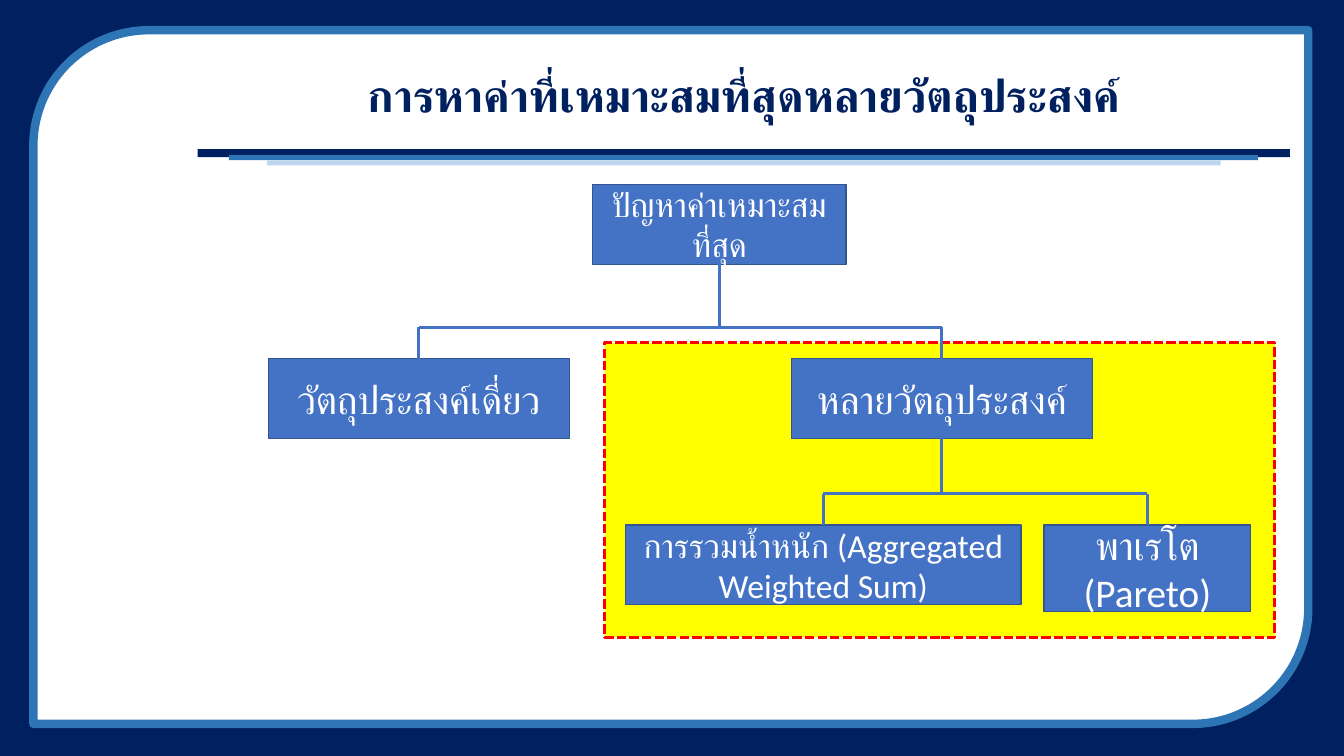
from lxml import etree
from pptx import Presentation
from pptx.dml.color import RGBColor
from pptx.enum.dml import MSO_LINE
from pptx.enum.shapes import MSO_CONNECTOR, MSO_SHAPE
from pptx.enum.text import MSO_ANCHOR, PP_ALIGN
from pptx.oxml.ns import qn
from pptx.util import Cm, Pt

RECTANGLE = MSO_SHAPE.RECTANGLE
DIAGONAL_FRAME = MSO_SHAPE.ROUND_2_DIAG_RECTANGLE
STRAIGHT = MSO_CONNECTOR.STRAIGHT
SQUARE_DASH = MSO_LINE.SQUARE_DOT
MIDDLE = MSO_ANCHOR.MIDDLE
CENTER = PP_ALIGN.CENTER
TOP, BOTTOM = 0, 2

WIDTH, HEIGHT = 33.87, 19.05
BOX_HEIGHT = 2.01
BRANCH_GAP = 0.79


def color(value):
    return RGBColor.from_string(value)


class TreeSlide:
    navy, blue, pale, white = "002060", "2E75B6", "BDD7EE", "FFFFFF"
    box_fill, box_line = "4472C4", "325491"
    title_font, box_font = "Arial", "Calibri"

    def __init__(self, presentation):
        self.slide = presentation.slides.add_slide(presentation.slide_layouts[6])

    def panel(self, left, top, width, height, fill, line=None, weight=1, kind=RECTANGLE):
        shape = self.slide.shapes.add_shape(
            kind, Cm(left), Cm(top), Cm(width), Cm(height))
        shape.shadow.inherit = False
        shape.fill.solid()
        shape.fill.fore_color.rgb = color(fill)
        if line:
            shape.line.color.rgb = color(line)
            shape.line.width = Pt(weight)
        else:
            shape.line.fill.background()
        return shape

    def set_text(self, shape, text, size, font, text_color, bold=False):
        """Put one centred paragraph into a shape."""
        frame = shape.text_frame
        frame.word_wrap = True
        frame.vertical_anchor = MIDDLE
        paragraph = frame.paragraphs[0]
        paragraph.text = text
        paragraph.alignment = CENTER
        paragraph.font.size = Pt(size)
        paragraph.font.name = font
        paragraph.font.bold = bold
        paragraph.font.color.rgb = color(text_color)
        return paragraph

    def title(self, text, left, top, width, height):
        shape = self.slide.shapes.add_textbox(Cm(left), Cm(top), Cm(width), Cm(height))
        paragraph = self.set_text(shape, text, 32, self.title_font, self.navy, bold=True)
        paragraph.line_spacing = 0.9

    def box(self, text, left, top, width, size=28, height=BOX_HEIGHT):
        shape = self.panel(left, top, width, height, self.box_fill, self.box_line)
        self.set_text(shape, text, size, self.box_font, self.white)
        return shape

    def line(self, start_x, start_y, end_x, end_y):
        connector = self.slide.shapes.add_connector(
            STRAIGHT, start_x, start_y, end_x, end_y)
        connector.line.color.rgb = color(self.box_fill)
        connector.line.width = Pt(2)
        etree.SubElement(connector._element.spPr, qn("a:effectLst"))
        return connector

    def branch(self, parent, children):
        """Join a parent box to its children through a horizontal bar."""
        bar_y = children[0].top - Cm(BRANCH_GAP)
        centers = [child.left + child.width // 2 for child in children]
        for child, x in zip(children, centers):
            self.line(x, child.top, x, bar_y).begin_connect(child, TOP)
        self.line(centers[0], bar_y, centers[-1], bar_y)
        x = parent.left + parent.width // 2
        self.line(x, parent.top + parent.height, x, bar_y).begin_connect(parent, BOTTOM)


def main():
    presentation = Presentation()
    presentation.slide_width = Cm(WIDTH)
    presentation.slide_height = Cm(HEIGHT)
    tree = TreeSlide(presentation)

    tree.panel(0, 0, WIDTH, HEIGHT, tree.navy)
    frame = tree.panel(0.84, 0.76, 32.13, 17.48, tree.white, tree.blue, 6, DIAGONAL_FRAME)
    frame.rotation = 180
    for left, top, width, height, fill in (
        (4.98, 3.76, 27.53, 0.2, tree.navy),
        (5.77, 3.91, 25.93, 0.13, tree.blue),
        (6.73, 4.04, 24.03, 0.13, tree.pale),
    ):
        tree.panel(left, top, width, height, fill)

    highlight = tree.panel(15.24, 8.64, 16.89, 7.42, "FFFF00", "FF0000", 2.25)
    highlight.line.dash_style = SQUARE_DASH
    tree.title("การหาค่าที่เหมาะสมที่สุดหลายวัตถุประสงค์", 4.98, 1.24, 27.53, 2.46)

    problem = tree.box("ปัญหาค่าเหมาะสมที่สุด", 14.94, 4.65, 6.38, size=24)
    pareto = tree.box("พาเรโต (Pareto)", 26.31, 13.23, 5.21, height=2.18)
    weighted = tree.box("การรวมน้ำหนัก (Aggregated Weighted Sum)",
                        15.77, 13.23, 9.96, size=24)
    multiple = tree.box("หลายวัตถุประสงค์", 19.94, 9.04, 7.59)
    single = tree.box("วัตถุประสงค์เดี่ยว", 6.76, 9.04, 7.59)

    tree.branch(problem, [single, multiple])
    tree.branch(multiple, [weighted, pareto])
    presentation.save("out.pptx")


if __name__ == "__main__":
    main()
